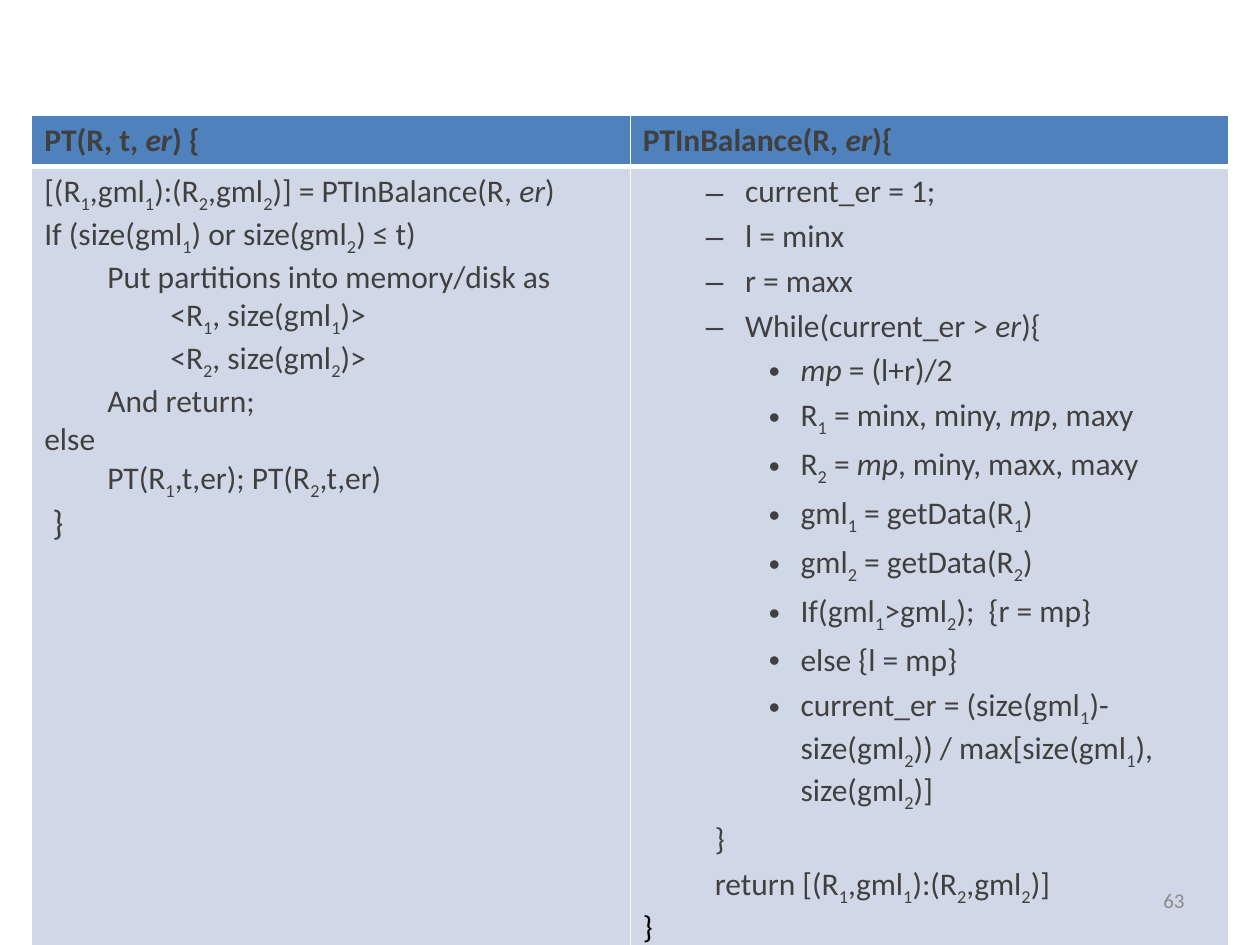
import dataclasses

import pptx
import pptx.dml.color
import pptx.enum.text
import pptx.oxml
import pptx.oxml.ns
import pptx.util
from lxml import etree

Cm, Pt = pptx.util.Cm, pptx.util.Pt
qn = pptx.oxml.ns.qn


@dataclasses.dataclass(frozen=True)
class Theme:
    font: str = "Calibri"
    ink: str = "404040"
    black: str = "000000"
    gray: str = "8C8C8C"
    head: str = "4F81BD"
    body: str = "D0D8E8"
    rule: str = "FFFFFF"
    code: int = 18
    large: int = 20
    small: int = 12


@dataclasses.dataclass(frozen=True)
class Style:
    """Paragraph layout; left and hang are centimetres, gap is points."""
    level: int = 0
    left: float = 0
    hang: float = 0
    gap: float = 0
    mark: str = ""
    size: int = Theme.code
    color: str = Theme.ink
    bold: bool = False


THEME = Theme()
PLAIN = Style()
HEAD = Style(bold=True)
STEP = Style(level=1, left=1.27)
DEEP = Style(level=2, left=2.54)
CLOSE = Style(level=1, left=1.27, hang=-1.11, size=THEME.large)
DASH = Style(level=1, left=2.06, hang=-0.79, gap=3.6, mark="–")
DOT = Style(level=2, left=3.18, hang=-0.64, gap=3.6, mark="•")
OUT = Style(level=2, left=3.18, hang=-1.73, gap=3.6)
END = Style(color=THEME.black)

# In code lines, *x* is italic and ~ lowers the next character.
SPLIT = [
    (PLAIN, "[(R~1,gml~1):(R~2,gml~2)] = PTInBalance(R, *er*)"),
    (PLAIN, "If (size(gml~1) or size(gml~2) ≤ t)"),
    (STEP, "Put partitions into memory/disk as"),
    (DEEP, "<R~1, size(gml~1)>"),
    (DEEP, "<R~2, size(gml~2)>"),
    (STEP, "And return;"),
    (PLAIN, "else"),
    (STEP, "PT(R~1,t,er); PT(R~2,t,er)"),
    (CLOSE, "}"),
]
BALANCE = [
    (DASH, "current_er = 1;"),
    (DASH, "l = minx"),
    (DASH, "r = maxx"),
    (DASH, "While(current_er > *er*){"),
    (DOT, "*mp* = (l+r)/2"),
    (DOT, "R~1 = minx, miny, *mp*, maxy"),
    (DOT, "R~2 = *mp*, miny, maxx, maxy"),
    (DOT, "gml~1 = getData(R~1)"),
    (DOT, "gml~2 = getData(R~2)"),
    (DOT, "If(gml~1>gml~2);  {r = mp}"),
    (DOT, "else {l = mp}"),
    (DOT, "current_er = (size(gml~1)-size(gml~2)) / max[size(gml~1), size(gml~2)]"),
    (OUT, "}"),
    (OUT, "return [(R~1,gml~1):(R~2,gml~2)]"),
    (END, "}"),
]
ROWS = [
    [[(HEAD, "PT(R, t, *er*) {")], [(HEAD, "PTInBalance(R, *er*){")]],
    [SPLIT, BALANCE],
]


def rgb(color):
    return pptx.dml.color.RGBColor.from_string(color)


def set_font(font, size, color):
    font.name = THEME.font
    font.size = Pt(size)
    font.color.rgb = rgb(color)


def add_run(para, text, style, italic, lowered):
    if not text:
        return
    run = para.add_run()
    run.text = text
    set_font(run.font, style.size, style.color)
    run.font.bold = style.bold
    run.font.italic = italic
    if lowered:
        run.font._element.set("baseline", "-25000")


def add_code(para, text, style):
    for index, part in enumerate(text.split("*")):
        italic = index % 2 == 1
        first, *rest = part.split("~")
        add_run(para, first, style, italic, False)
        for piece in rest:
            add_run(para, piece[0], style, italic, True)
            add_run(para, piece[1:], style, italic, False)


def set_style(para, style):
    para.level = style.level
    para.space_before = Pt(style.gap)
    props = para._p.get_or_add_pPr()
    props.set("marL", str(Cm(style.left)))
    props.set("indent", str(Cm(style.hang)))
    if style.mark:
        etree.SubElement(props, qn("a:buFont"), typeface="Arial")
        etree.SubElement(props, qn("a:buChar"), char=style.mark)
    else:
        etree.SubElement(props, qn("a:buNone"))


def set_rules(cell, widths):
    props = cell._tc.get_or_add_tcPr()
    for side, width in widths.items():
        line = etree.SubElement(props, qn("a:ln" + side), w=str(Pt(width)))
        fill = etree.SubElement(line, qn("a:solidFill"))
        etree.SubElement(fill, qn("a:srgbClr"), val=THEME.rule)


def fill_cell(cell, lines, color, widths):
    set_rules(cell, widths)
    cell.fill.solid()
    cell.fill.fore_color.rgb = rgb(color)
    frame = cell.text_frame
    for index, (style, text) in enumerate(lines):
        para = frame.add_paragraph() if index else frame.paragraphs[0]
        set_style(para, style)
        add_code(para, text, style)


def add_grid(slide):
    table = slide.shapes.add_table(
        2, 2, Cm(0.64), Cm(2.33), Cm(24.13), Cm(15.65)).table
    table.rows[0].height = Cm(0.69)
    table.rows[1].height = Cm(14.96)
    looks = [
        (THEME.head, {"L": 1, "R": 1, "T": 1, "B": 3}),
        (THEME.body, {"L": 1, "R": 1, "T": 3, "B": 1}),
    ]
    for row, texts, (color, widths) in zip(table.rows, ROWS, looks):
        for cell, lines in zip(row.cells, texts):
            fill_cell(cell, lines, color, widths)


def add_number(slide, text):
    box = slide.shapes.add_textbox(Cm(18.2), Cm(17.65), Cm(5.93), Cm(1.01))
    frame = box.text_frame
    frame.word_wrap = True
    frame.vertical_anchor = pptx.enum.text.MSO_ANCHOR.MIDDLE
    para = frame.paragraphs[0]
    para.text = text
    para.alignment = pptx.enum.text.PP_ALIGN.RIGHT
    set_font(para.font, THEME.small, THEME.gray)


def main():
    deck = pptx.Presentation()
    deck.slide_width, deck.slide_height = Cm(25.4), Cm(19.05)
    slide = deck.slides.add_slide(deck.slide_layouts.get_by_name("Blank"))
    add_grid(slide)
    add_number(slide, "63")
    deck.save("out.pptx")


if __name__ == "__main__":
    main()
